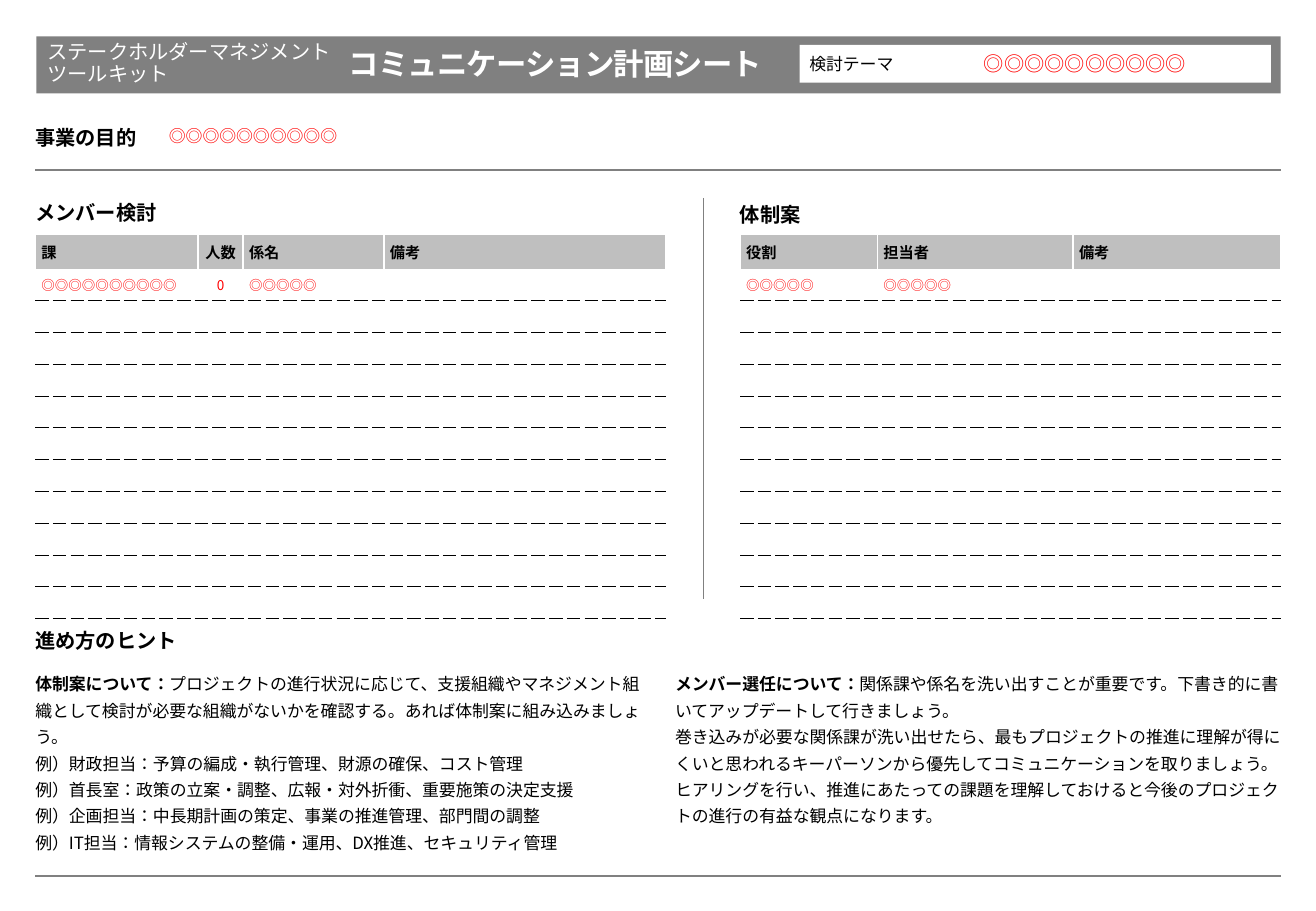
import pptx
import pptx.util
import pptx.dml.color
import pptx.enum.lang
import pptx.enum.shapes
import pptx.enum.text
import pptx.oxml
import pptx.oxml.ns
import lxml.etree

Inches = pptx.util.Inches
Pt = pptx.util.Pt
qn = pptx.oxml.ns.qn
FONT = "Noto Sans CJK JP"
COLORS = {"bar": "808080", "header": "BFBFBF", "white": "FFFFFF", "ink": "000000", "sample": "FF0000"}
NO_GRID_STYLE = "{2D5ABB26-0587-4C30-8999-92F81FD0307C}"
LEFT, RIGHT = 0.29, 10.54
MIDDLE = pptx.enum.text.MSO_ANCHOR.MIDDLE
CENTER = pptx.enum.text.PP_ALIGN.CENTER
ALIGN_LEFT = pptx.enum.text.PP_ALIGN.LEFT
BLANK_ROWS = 10
HEADER_HEIGHT, BODY_HEIGHT = 0.28, 2.88

HINTS = [
    [("体制案について：", True),
     ("プロジェクトの進行状況に応じて、支援組織やマネジメント組織として検討が必要な組織がないかを確認する。"
      "あれば体制案に組み込みましょう。", False)],
    [("例）財政担当：予算の編成・執行管理、財源の確保、コスト管理", False)],
    [("例）首長室：政策の立案・調整、広報・対外折衝、重要施策の決定支援", False)],
    [("例）企画担当：中長期計画の策定、事業の推進管理、部門間の調整", False)],
    [("例）IT担当：情報システムの整備・運用、DX推進、セキュリティ管理", False)],
    [("メンバー選任について：", True),
     ("関係課や係名を洗い出すことが重要です。下書き的に書いてアップデートして行きましょう。\n"
      "巻き込みが必要な関係課が洗い出せたら、最もプロジェクトの推進に理解が得にくいと思われるキーパーソンから"
      "優先してコミュニケーションを取りましょう。ヒアリングを行い、推進にあたっての課題を理解しておけると"
      "今後のプロジェクトの進行の有益な観点になります。", False)],
]


def rgb(name):
    """Return the named palette colour."""
    return pptx.dml.color.RGBColor.from_string(COLORS[name])


def add_run(paragraph, text, size, color="ink", bold=False):
    """Append one formatted Japanese run and return it."""
    run = paragraph.add_run()
    run.text = text
    run.font.size, run.font.bold, run.font.name = Pt(size), bold, FONT
    run.font.language_id = pptx.enum.lang.MSO_LANGUAGE_ID.JAPANESE
    run.font.color.rgb = rgb(color)
    lxml.etree.SubElement(run._r.rPr, qn("a:ea"), typeface=FONT)
    return run


def setup_frame(frame, anchor=None, insets=(0, 0, 0, 0)):
    """Set wrapping, anchor and insets of a text frame."""
    frame.word_wrap = True
    frame.auto_size = pptx.enum.text.MSO_AUTO_SIZE.NONE
    frame.vertical_anchor = anchor or pptx.enum.text.MSO_ANCHOR.TOP
    frame.margin_left, frame.margin_top, frame.margin_right, frame.margin_bottom = map(Inches, insets)
    return frame


def add_text(slide, box, paragraphs, size, color="ink", spacing=1.0, anchor=None, align=None):
    """Place a text box holding paragraphs of (text, bold) runs."""
    frame = setup_frame(slide.shapes.add_textbox(*map(Inches, box)).text_frame, anchor)
    for index, runs in enumerate(paragraphs):
        paragraph = frame.add_paragraph() if index else frame.paragraphs[0]
        paragraph.line_spacing, paragraph.alignment = spacing, align
        for text, bold in runs:
            for number, part in enumerate(text.split("\n")):
                if number:
                    paragraph.add_line_break()
                add_run(paragraph, part, size, color, bold)
    return frame


def add_panel(slide, box, color):
    """Place a plain filled rectangle."""
    panel = slide.shapes.add_shape(pptx.enum.shapes.MSO_SHAPE.RECTANGLE, *map(Inches, box))
    panel.shadow.inherit = False
    panel.fill.solid()
    panel.fill.fore_color.rgb = rgb(color)
    panel.line.fill.background()
    return panel


def add_rule(slide, start, end):
    """Draw a thin grey line between two points."""
    rule = slide.shapes.add_connector(
        pptx.enum.shapes.MSO_CONNECTOR.STRAIGHT, *map(Inches, start + end))
    rule.line.color.rgb = rgb("bar")
    rule.line.width = Pt(1)
    lxml.etree.SubElement(rule.element.spPr, qn("a:effectLst"))


def add_title_bar(slide, box):
    """Build the grey bar with toolkit name, sheet title and theme field."""
    left, top, width, height = box
    bar = add_panel(slide, box, "bar")
    title = slide.shapes.title
    title.element.addprevious(bar.element)
    title.left, title.top, title.width, title.height = map(
        Inches, (left + 2.57, top + 0.09, 3.61, 0.27))
    heading = setup_frame(title.text_frame, MIDDLE).paragraphs[0]
    heading.alignment = ALIGN_LEFT
    heading.line_spacing = 1.0
    run = add_run(heading, "コミュニケーション計画シート", 18, "white", True)
    run._r.rPr.set("spc", "-50")
    add_text(slide, (left + 0.09, top + 0.09, 2.46, 0.27),
             [[("ステークホルダーマネジメント", False)], [("ツールキット", False)]],
             12, "white", 0.9, MIDDLE)
    theme = add_panel(slide, (left + 6.28, top + 0.07, 3.88, 0.31), "white")
    label = setup_frame(theme.text_frame, MIDDLE, (0.08, 0, 0, 0)).paragraphs[0]
    label.alignment = ALIGN_LEFT
    add_run(label, "検討テーマ", 10)
    add_text(slide, (left + 7.12, top + 0.09, 3.02, 0.27), [[("◎" * 10, False)]],
             12, "sample", anchor=MIDDLE, align=CENTER)


def add_heading(slide, box, text):
    """Place a bold section heading on a white panel."""
    heading = setup_frame(add_panel(slide, box, "white").text_frame).paragraphs[0]
    heading.alignment, heading.line_spacing = ALIGN_LEFT, 1.2
    add_run(heading, text, 12, bold=True)


def add_purpose(slide, box):
    """Build the project purpose row and the rule below it."""
    left, top, width, height = box
    add_heading(slide, (left, top + 0.11, 0.87, 0.26), "事業の目的")
    add_text(slide, (left + 1.1, top, width - 1.1, 0.44), [[("◎" * 10, False)]],
             10, "sample", 1.2, MIDDLE)
    add_rule(slide, (left, top + height), (left + width, top + height))


def set_borders(cell, borders):
    """Give a cell its borders as (tag, colour, points, dash)."""
    properties = cell._tc.get_or_add_tcPr()
    for index, (tag, color, points, dash) in enumerate(borders):
        line = lxml.etree.Element(qn("a:" + tag), w=str(Pt(points)))
        fill = lxml.etree.SubElement(line, qn("a:solidFill"))
        lxml.etree.SubElement(fill, qn("a:srgbClr"), val=COLORS[color])
        lxml.etree.SubElement(line, qn("a:prstDash"), val=dash)
        properties.insert(index, line)


def add_worksheet(slide, left, top, widths, headers, samples, centered=()):
    """Build a fill-in table with a header, a sample row and blank rows."""
    contents = [headers, samples] + [[""] * len(widths)] * BLANK_ROWS
    holder = slide.shapes.add_table(len(contents), len(widths), *map(
        Inches, (left, top, sum(widths), HEADER_HEIGHT + BODY_HEIGHT)))
    holder.element.find(".//" + qn("a:tableStyleId")).text = NO_GRID_STYLE
    table = holder.table
    table.first_row = table.horz_banding = False
    for column, width in zip(table.columns, widths):
        column.width = Inches(width)
    for number, (row, texts) in enumerate(zip(table.rows, contents)):
        is_header = number == 0
        row.height = Inches(HEADER_HEIGHT if is_header else BODY_HEIGHT / (BLANK_ROWS + 1))
        for column, (cell, text) in enumerate(zip(row.cells, texts)):
            cell.vertical_anchor = MIDDLE
            cell.margin_left = cell.margin_right = cell.margin_top = cell.margin_bottom = Inches(0.05)
            cell.fill.solid()
            cell.fill.fore_color.rgb = rgb("header" if is_header else "white")
            paragraph = cell.text_frame.paragraphs[0]
            if column in centered:
                paragraph.alignment = CENTER
            if text:
                add_run(paragraph, text, 9 if is_header else 8, "ink" if is_header else "sample", is_header)
            else:
                lxml.etree.SubElement(paragraph._p, qn("a:endParaRPr"), sz="800")
            if is_header:
                set_borders(cell, [(tag, "white", 1, "solid") for tag in ("lnL", "lnR", "lnT")])
            else:
                tags = ("lnT", "lnB") if number > 1 else ("lnB",)
                set_borders(cell, [(tag, "ink", 0.5, "dash") for tag in tags])


def add_hints(slide, box):
    """Build the two-column hints and the closing rule."""
    left, top, width, height = box
    add_heading(slide, (left, top, 4.15, 0.23), "進め方のヒント")
    frame = add_text(slide, (left, top + 0.37, width, 1.6), HINTS, 10, spacing=1.3)
    columns = frame._txBody.bodyPr
    columns.set("numCol", "2")
    columns.set("spcCol", str(Inches(0.28)))
    add_rule(slide, (left, top + height), (left + width, top + height))


def main():
    """Build and save the communication planning sheet."""
    deck = pptx.Presentation()
    deck.slide_width, deck.slide_height = Inches(10.83), Inches(7.5)
    slide = deck.slides.add_slide(deck.slide_layouts[5])
    width = RIGHT - LEFT
    add_title_bar(slide, (0.3, 0.3, 10.24, 0.47))
    add_purpose(slide, (LEFT, 0.88, width, 0.52))
    add_heading(slide, (LEFT, 1.61, 5.92, 0.23), "メンバー検討")
    add_rule(slide, (5.79, 1.63), (5.79, 4.93))
    add_heading(slide, (6.09, 1.63, 3.73, 0.23), "体制案")
    add_worksheet(slide, 6.09, 1.93, [1.13, 1.61, 1.71], ["役割", "担当者", "備考"],
                  ["◎" * 5, "◎" * 5, ""])
    add_worksheet(slide, LEFT, 1.93, [1.34, 0.37, 1.16, 2.32], ["課", "人数", "係名", "備考"],
                  ["◎" * 10, "0", "◎" * 5, ""], centered=(1,))
    add_hints(slide, (LEFT, 5.13, width, 2.08))
    deck.save("out.pptx")


if __name__ == "__main__":
    main()
